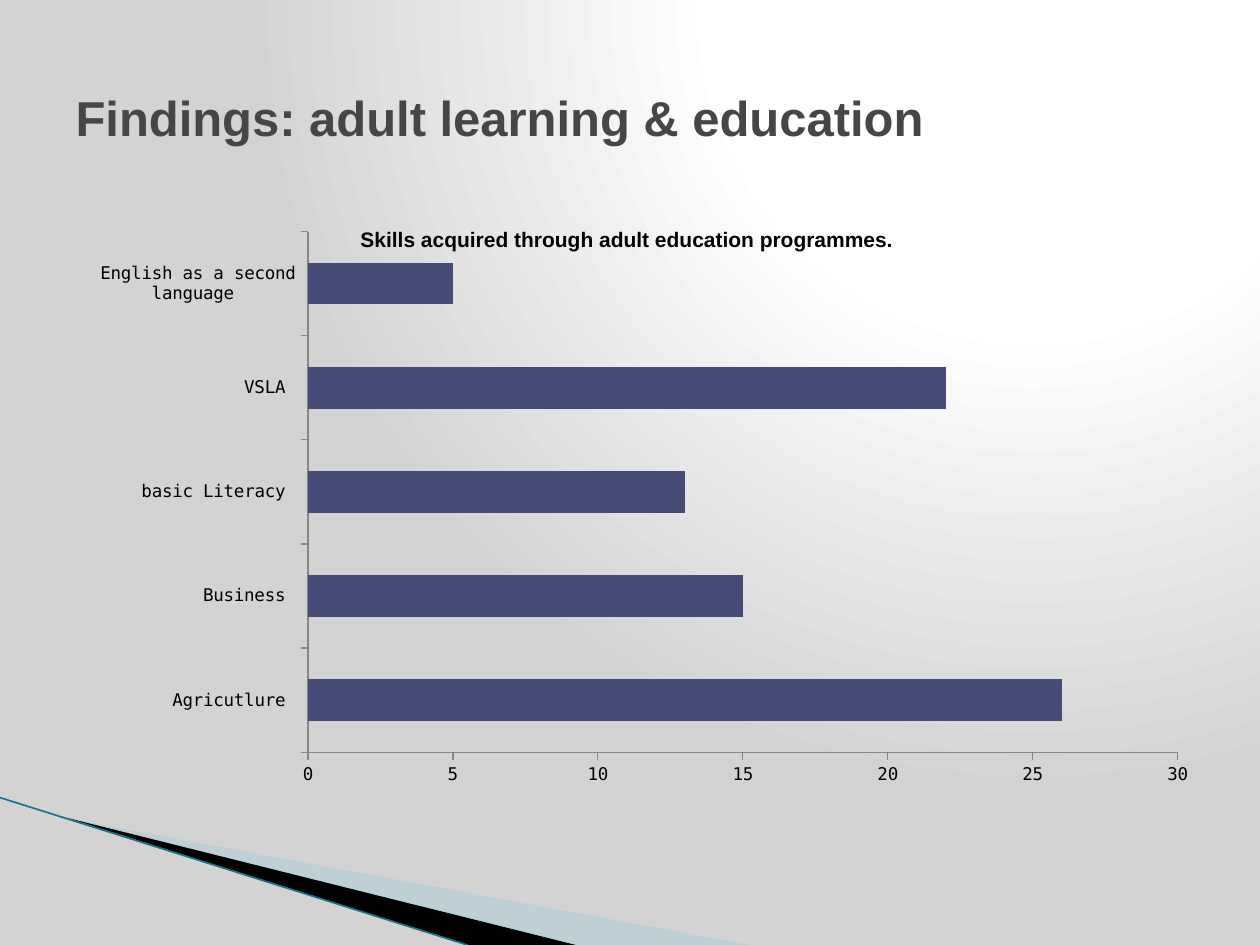
"""Build the slide on skills from adult learning and education."""
import pptx
import pptx.chart.data
import pptx.dml.color
import pptx.enum.chart
import pptx.enum.text
import pptx.oxml
import pptx.oxml.ns
import pptx.util
from lxml import etree

Inches = pptx.util.Inches
Pt = pptx.util.Pt
qn = pptx.oxml.ns.qn
NAMES = pptx.oxml.ns.nsdecls("a", "p")
SKILLS = {
    "Agricutlure ": 26,
    "Business ": 15,
    "basic Literacy ": 13,
    "VSLA ": 22,
    "English as a second language ": 5,
}
PLOT = {"x": 0.216, "y": 0.044, "w": 0.767, "h": 0.835}
STOPS = {0: "FFFFFF", 40: "FFFFFF", 100: "D3D3D3"}


def color(code):
    """Return the colour for a hex string."""
    return pptx.dml.color.RGBColor.from_string(code)


def style(item, values):
    """Set each attribute of an item from a dict."""
    for name, value in values.items():
        setattr(item, name, value)


def write(font, size, face, code, bold=False):
    """Format a font."""
    style(font, {"size": Pt(size), "name": face, "bold": bold})
    font.color.rgb = color(code)


def paint(slide):
    """Give the slide its round gradient."""
    stops = "".join(
        f'<a:gs pos="{pos * 1000}"><a:srgbClr val="{code}"/></a:gs>'
        for pos, code in STOPS.items()
    )
    back = pptx.oxml.parse_xml(
        f'<p:bg {NAMES}><p:bgPr><a:gradFill rotWithShape="1">'
        f'<a:gsLst>{stops}</a:gsLst><a:path path="circle">'
        '<a:fillToRect l="65000" t="0" r="0" b="98000"/></a:path>'
        '</a:gradFill><a:effectLst/></p:bgPr></p:bg>'
    )
    slide.element.cSld.insert(0, back)


def wedge(slide, points, code, alpha=100):
    """Draw a filled sliver through the points."""
    spots = [(Inches(x), Inches(y)) for x, y in points]
    pen = slide.shapes.build_freeform(*spots[0])
    pen.add_line_segments(spots[1:], close=True)
    shape = pen.convert_to_shape()
    shape.shadow.inherit = False
    shape.fill.solid()
    shape.fill.fore_color.rgb = color(code)
    shape.line.fill.background()
    if alpha < 100:
        tint = shape.element.spPr.find(".//" + qn("a:srgbClr"))
        etree.SubElement(tint, qn("a:alpha")).set("val", str(alpha * 1000))


def edge(slide, start, end, code, width):
    """Draw a plain line."""
    ends = [Inches(n) for n in start + end]
    line = slide.shapes.add_connector(1, *ends)
    line.line.color.rgb = color(code)
    line.line.width = Pt(width)
    etree.SubElement(line.element.spPr, qn("a:effectLst"))


def head(slide, text):
    """Place and format the slide title."""
    title = slide.shapes.title
    style(title, {"left": Inches(0.5), "top": Inches(0.3),
                  "width": Inches(9), "height": Inches(1.25)})
    frame = title.text_frame
    style(frame, {"text": text, "word_wrap": True,
                  "vertical_anchor": pptx.enum.text.MSO_ANCHOR.MIDDLE})
    para = frame.paragraphs[0]
    para.alignment = pptx.enum.text.PP_ALIGN.LEFT
    write(para.runs[0].font, 28, "Arial", "464646", True)


def place(chart):
    """Fix the inner plot area within the chart."""
    area = chart.element.find(".//" + qn("c:plotArea"))
    old = area.find(qn("c:layout"))
    if old is not None:
        area.remove(old)
    layout = etree.Element(qn("c:layout"))
    area.insert(0, layout)
    manual = etree.SubElement(layout, qn("c:manualLayout"))
    rules = {"layoutTarget": "inner", "xMode": "edge", "yMode": "edge", **PLOT}
    for name, value in rules.items():
        etree.SubElement(manual, qn("c:" + name)).set("val", str(value))


def bars(slide):
    """Add the bar chart of skills."""
    data = pptx.chart.data.CategoryChartData()
    data.categories = list(SKILLS)
    data.add_series("Series 1", list(SKILLS.values()))
    kind = pptx.enum.chart.XL_CHART_TYPE.BAR_CLUSTERED
    box = [Inches(n) for n in (0.5, 1.62, 9, 4.95)]
    chart = slide.shapes.add_chart(kind, *box, data).chart
    write(chart.font, 10, "DejaVu Sans Mono", "000000")
    style(chart, {"has_legend": False, "has_title": True})
    frame = chart.chart_title.text_frame
    frame.text = "Skills acquired through adult education programmes. "
    write(frame.paragraphs[0].runs[0].font, 12, "Arial", "000000", True)
    chart.chart_title.include_in_layout = False
    plot = chart.plots[0]
    style(plot, {"gap_width": 150, "vary_by_categories": False})
    fill = plot.series[0].format.fill
    fill.solid()
    fill.fore_color.rgb = color("474B78")
    for axis in (chart.category_axis, chart.value_axis):
        style(axis, {"has_major_gridlines": False,
                     "major_tick_mark": pptx.enum.chart.XL_TICK_MARK.OUTSIDE})
        axis.format.line.color.rgb = color("868686")
        axis.format.line.width = Pt(0.75)
    style(chart.value_axis, {"minimum_scale": 0, "maximum_scale": 30,
                             "major_unit": 5})
    place(chart)


def main():
    """Build and save the slide."""
    deck = pptx.Presentation()
    style(deck, {"slide_width": Inches(10), "slide_height": Inches(7.5)})
    slide = deck.slides.add_slide(deck.slide_layouts[5])
    paint(slide)
    wedge(slide, [(0.55, 6.5), (5.95, 7.5), (4.56, 7.5)], "A0CBDC", 40)
    wedge(slide, [(0.53, 6.49), (4.57, 7.5), (3.72, 7.5)], "000000")
    edge(slide, (0, 6.33), (3.71, 7.5), "17728A", 0.95)
    head(slide, "Findings: adult learning & education")
    bars(slide)
    deck.save("out.pptx")


if __name__ == "__main__":
    main()
